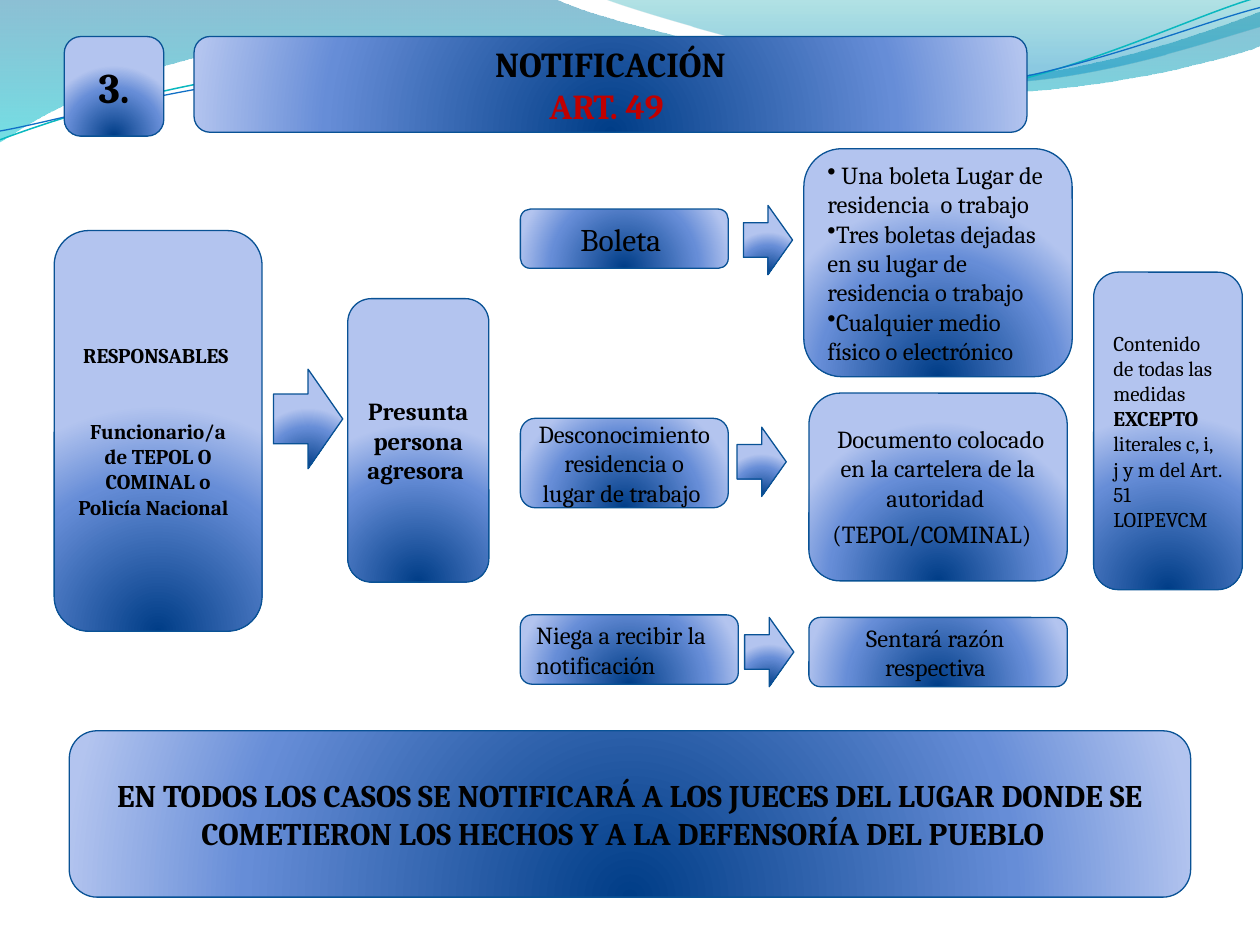
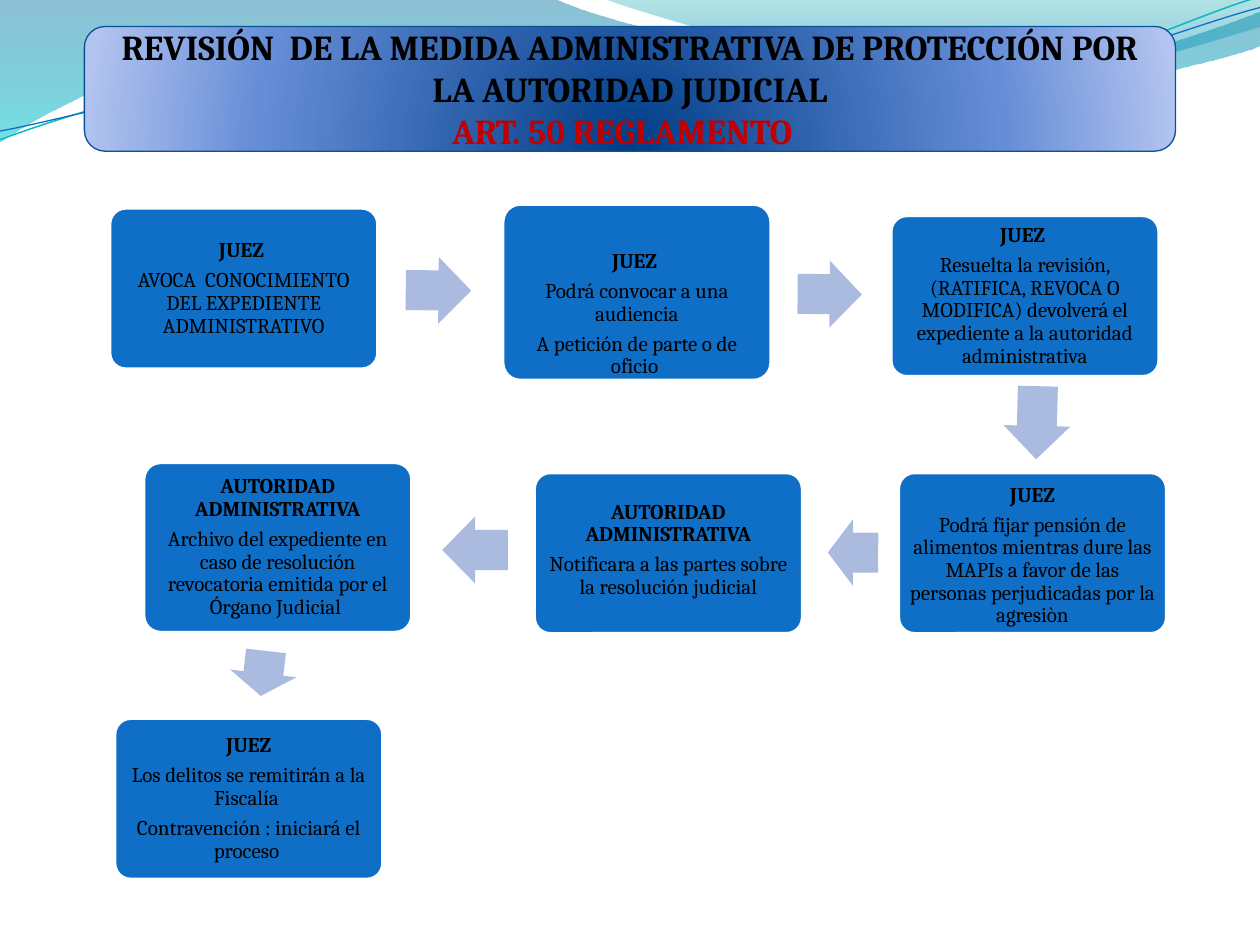
from dataclasses import dataclass

from lxml import etree
from pptx import Presentation
from pptx import util as u
from pptx.dml.color import RGBColor
from pptx.enum import shapes, text
from pptx.oxml import ns, parse_xml

FONT = "Cambria"
BLACK, RED, WHITE = "000000", "C00000", "FFFFFF"
EDGE, STEP_BLUE, ARROW_BLUE = "095295", "0F6FC6", "ABBBDF"
GLOW = [(0, "003D87", 100), (68, "668DD7", 100), (100, "B3C4EF", 100)]
CENTER, LEFT = text.PP_ALIGN.CENTER, text.PP_ALIGN.LEFT
ROUNDED = shapes.MSO_SHAPE.ROUNDED_RECTANGLE
ARROW = shapes.MSO_SHAPE.RIGHT_ARROW


@dataclass
class Span:
    words: str
    size: float = 14
    bold: bool = False
    color: str = BLACK


@dataclass
class Place:
    left: float
    top: float
    width: float
    height: float

    def lengths(self) -> list:
        return [u.Inches(v) for v in (self.left, self.top, self.width, self.height)]


@dataclass
class Card:
    """Glossy rounded box; each paragraph is a list of spans."""
    place: Place
    paragraphs: list
    align: int = CENTER
    bullet: bool = False
    gap: float = 0


@dataclass
class Step:
    """Flat process box: a bold actor above what that actor does."""
    place: Place
    actor: str
    actions: list
    drop: float = 0


@dataclass
class Turn:
    place: Place
    angle: float


@dataclass
class Wave:
    """Outline pieces: 2 numbers for a straight line, 6 for a Bézier curve."""
    start: tuple
    pieces: list
    stops: list = None
    line: str = None
    weight: float = 0


# ---- Formatting helpers
def rgb(code: str) -> RGBColor:
    return RGBColor.from_string(code)


def gradient(shape, stops: list, direction: str) -> None:
    """Fill with (position, colour, opacity) stops."""
    marks = "".join(f'<a:gs pos="{pos * 1000}"><a:srgbClr val="{code}">'
                    f'<a:alpha val="{opacity * 1000}"/></a:srgbClr></a:gs>'
                    for pos, code, opacity in stops)
    shape.fill.background()
    blank = shape.element.spPr.find(ns.qn("a:noFill"))
    blank.getparent().replace(blank, parse_xml(
        f'<a:gradFill {ns.nsdecls("a")} rotWithShape="1"><a:gsLst>{marks}</a:gsLst>'
        f'{direction}</a:gradFill>'))


def glossy(shape) -> None:
    gradient(shape, GLOW, '<a:path path="circle"><a:fillToRect l="50000" t="130000" '
                          'r="50000" b="-30000"/></a:path>')
    shape.line.color.rgb = rgb(EDGE)
    shape.line.width = u.Pt(0.75)
    shape.shadow.inherit = False


def write(frame, paragraphs: list, align: int = CENTER) -> None:
    frame.word_wrap = True
    frame.auto_size = text.MSO_AUTO_SIZE.NONE
    frame.vertical_anchor = text.MSO_ANCHOR.MIDDLE
    for number, spans in enumerate(paragraphs):
        para = frame.add_paragraph() if number else frame.paragraphs[0]
        para.alignment = align
        for span in spans:
            run = para.add_run()
            run.text = span.words
            font = run.font
            font.name, font.size, font.bold = FONT, u.Pt(span.size), span.bold
            font.color.rgb = rgb(span.color)


# ---- Drawing functions
def draw_card(page, card: Card) -> None:
    box = page.shapes.add_shape(ROUNDED, *card.place.lengths())
    glossy(box)
    write(box.text_frame, card.paragraphs, card.align)
    for para in box.text_frame.paragraphs[1:]:
        para.space_before = u.Pt(card.gap)
    if card.bullet:
        for para in box.text_frame.paragraphs:
            properties = para._p.get_or_add_pPr()
            properties.set("marL", "0")
            properties.set("indent", "0")
            etree.SubElement(properties, ns.qn("a:buChar"), char="•")


def draw_glossy_arrow(page, place: Place) -> None:
    glossy(page.shapes.add_shape(ARROW, *place.lengths()))


def draw_step(page, step: Step) -> None:
    box = page.shapes.add_shape(ROUNDED, *step.place.lengths())
    box.adjustments[0] = 0.1
    box.shadow.inherit = False
    box.fill.solid()
    box.fill.fore_color.rgb = rgb(STEP_BLUE)
    box.line.color.rgb = rgb(WHITE)
    box.line.width = u.Pt(2)
    frame = box.text_frame
    frame.margin_left = frame.margin_right = frame.margin_bottom = u.Inches(0.05)
    frame.margin_top = u.Inches(0.05 + step.drop)
    write(frame, [[Span(step.actor, 12, True)]] + [[Span(a, 12)] for a in step.actions])
    for para in frame.paragraphs:
        para.line_spacing = 0.9
        para.space_after = u.Pt(4.2)


def draw_turn(page, turn: Turn) -> None:
    arrow = page.shapes.add_shape(ARROW, *turn.place.lengths())
    arrow.adjustments[0], arrow.adjustments[1] = 0.6, 0.5
    arrow.rotation = turn.angle
    arrow.shadow.inherit = False
    arrow.fill.solid()
    arrow.fill.fore_color.rgb = rgb(ARROW_BLUE)
    arrow.line.fill.background()


def draw_title(page, place: Place, heading: str, article: str) -> None:
    band = page.shapes.add_shape(ROUNDED, *place.lengths())
    glossy(band)
    title = page.shapes.title
    title.left, title.top, title.width, title.height = place.lengths()
    write(title.text_frame, [[Span(heading, 20, True)], [Span(article, 20, True, RED)]])
    band.element.addnext(title.element)


def draw_wave(page, wave: Wave):
    def emu(numbers: tuple) -> list:
        return [(u.Inches(x), u.Inches(y)) for x, y in zip(numbers[::2], numbers[1::2])]

    pieces = [emu(piece) for piece in wave.pieces]
    builder = page.shapes.build_freeform(*emu(wave.start)[0])
    builder.add_line_segments([piece[-1] for piece in pieces], close=bool(wave.stops))
    shape = builder.convert_to_shape()

    # Bend the straight segments that have control points
    segments = list(shape.element.iter(ns.qn("a:lnTo")))
    for segment, piece in zip(segments, pieces):
        if len(piece) == 3:
            curve = etree.Element(ns.qn("a:cubicBezTo"))
            for x, y in piece:
                etree.SubElement(curve, ns.qn("a:pt"),
                                 x=str(x - shape.left), y=str(y - shape.top))
            segment.getparent().replace(segment, curve)

    shape.shadow.inherit = False
    if wave.stops:
        gradient(shape, wave.stops, '<a:lin ang="5400000" scaled="0"/>')
        shape.line.fill.background()
    else:
        shape.fill.background()
        shape.line.color.rgb = rgb(wave.line)
        shape.line.width = u.Pt(wave.weight)
    return shape


# ---- Shared header waves
WAVES = [
    Wave((0, 0), [(4.4, -0.01), (4.76, 0.17, 6.64, 0.63, 7.58, 0.63),
                  (8.53, 0.63, 9.58, 0.26, 10, 0.09), (10.01, 0.36),
                  (9.83, 0.44, 8.7, 0.76, 7.46, 0.75),
                  (6.22, 0.75, 3.82, 0.28, 2.57, 0.34),
                  (1.29, 0.36, 0.46, 0.83, -0.01, 1.13)],
         stops=[(0, "0074A1", 45), (100, "00C6CF", 55)]),
    Wave((4.79, -0.01), [(5.09, 0.11, 6.82, 0.62, 7.69, 0.65),
                         (8.56, 0.69, 9.61, 0.32, 10, 0.21), (10, 0)],
         stops=[(0, "00A1A9", 30), (80, "008BBF", 45)]),
    Wave((0, 1.11), [(0.48, 0.93, 1.58, 0.57, 2.77, 0.52),
                     (3.95, 0.47, 5.93, 0.89, 7.13, 0.8),
                     (8.33, 0.71, 9.38, 0.15, 9.98, -0.02)], line="0AB8BF", weight=0.85),
    Wave((0, 1.04), [(0.47, 0.96, 1.64, 0.61, 2.83, 0.56),
                     (4.03, 0.51, 5.97, 0.84, 7.17, 0.75),
                     (8.36, 0.67, 9.41, 0.21, 10, 0.06)], line="0F6FC6", weight=0.75),
]

# ---- Slide 1: notification
NOTICE_CARDS = [
    Card(Place(0.51, 0.29, 0.79, 0.79), [[Span("3.", 24, True)]]),
    Card(Place(0.43, 1.83, 1.65, 3.18),
         [[Span("RESPONSABLES ", 12, True)],
          [Span("Funcionario/a de TEPOL O COMINAL o Policía Nacional  ", 12, True)]], gap=29),
    Card(Place(2.76, 2.37, 1.12, 2.25), [[Span("Presunta persona agresora ", bold=True)]]),
    Card(Place(8.68, 2.16, 1.18, 2.52),
         [[Span("Contenido de todas las medidas  ", 12), Span("EXCEPTO ", 12, True),
           Span("literales c, i, j y m del Art. 51 LOIPEVCM", 12)]], LEFT),
    Card(Place(4.13, 1.66, 1.65, 0.47), [[Span("Boleta ", 18)]]),
    Card(Place(4.13, 3.32, 1.65, 0.71),
         [[Span("Desconocimiento residencia o lugar de trabajo ")]]),
    Card(Place(4.13, 4.88, 1.73, 0.55), [[Span("Niega a recibir la notificación")]], LEFT),
    Card(Place(6.38, 1.18, 2.13, 1.81),
         [[Span(" Una boleta Lugar de residencia  o trabajo")],
          [Span("Tres boletas dejadas en su lugar de residencia o trabajo")],
          [Span("Cualquier medio físico o electrónico")]], LEFT, bullet=True),
    Card(Place(6.42, 3.12, 2.05, 1.49),
         [[Span(" Documento colocado en la cartelera de la autoridad  (TEPOL/COMINAL) "),
           Span(" ", 18)]]),
    Card(Place(6.42, 4.9, 2.05, 0.55), [[Span("Sentará razón  respectiva ")]]),
    Card(Place(0.55, 5.8, 8.9, 1.32),
         [[Span("EN TODOS LOS CASOS SE NOTIFICARÁ A LOS JUECES DEL LUGAR DONDE SE "
                "COMETIERON LOS HECHOS Y A LA DEFENSORÍA DEL PUEBLO  ", 18, True)]]),
]
NOTICE_ARROWS = [Place(2.17, 2.93, 0.55, 0.79)] + [
    Place(left, top, 0.39, 0.55) for left, top in ((5.9, 1.63), (5.85, 3.39), (5.91, 4.9))]

# ---- Slide 2: judicial review
STEP_W, STEP_H, TURN_H = 2.13, 1.28, 0.53
JUDGE, AUTHORITY = "JUEZ ", "AUTORIDAD ADMINISTRATIVA"
REVIEW_STEPS = [
    Step(Place(0.87, 1.65, STEP_W, STEP_H), JUDGE,
         ["AVOCA  CONOCIMIENTO DEL EXPEDIENTE ADMINISTRATIVO"]),
    Step(Place(3.99, 1.62, STEP_W, 1.4), JUDGE,
         ["Podrá convocar a una audiencia", "A petición de parte o de oficio "], drop=0.35),
    Step(Place(7.07, 1.71, STEP_W, STEP_H), JUDGE,
         ["Resuelta la revisión, (RATIFICA, REVOCA O MODIFICA) devolverá el expediente "
          "a la autoridad administrativa"]),
    Step(Place(7.13, 3.75, STEP_W, STEP_H), JUDGE.strip(),
         ["Podrá fijar pensión de alimentos mientras dure las MAPIs a favor de las "
          "personas perjudicadas por la agresiòn"], drop=0.04),
    Step(Place(4.24, 3.75, STEP_W, STEP_H), AUTHORITY,
         ["Notificara a las partes sobre la resolución judicial"], drop=-0.05),
    Step(Place(1.14, 3.67, STEP_W, 1.35), AUTHORITY,
         ["Archivo del expediente en caso de resolución revocatoria emitida por el "
          "Órgano Judicial "]),
    Step(Place(0.91, 5.7, STEP_W, STEP_H), JUDGE.strip(),
         ["Los delitos se remitirán a la Fiscalía ", "Contravención : iniciará el proceso "]),
]
REVIEW_TURNS = [Turn(Place(left, top, width, TURN_H), angle) for left, top, width, angle in (
    (3.22, 2.04, 0.52, 0.5), (6.33, 2.07, 0.51, 0.5), (7.94, 3.09, 0.58, 91.4),
    (6.57, 4.12, 0.4, 180.1), (3.51, 4.1, 0.52, 180), (1.91, 5.08, 0.36, 96.6))]


def main() -> None:
    deck = Presentation()
    deck.slide_width, deck.slide_height = u.Inches(10), u.Inches(7.5)
    layout = deck.slide_layouts.get_by_name("Title Only")
    notice, review = (deck.slides.add_slide(layout) for _ in range(2))

    # Waves live on the layout, behind everything
    for position, wave in enumerate(WAVES, start=2):
        layout.shapes.element.insert(position, draw_wave(notice, wave).element)

    draw_title(notice, Place(1.54, 0.29, 6.61, 0.76), "NOTIFICACIÓN", "ART. 49 ")
    for card in NOTICE_CARDS:
        draw_card(notice, card)
    for place in NOTICE_ARROWS:
        draw_glossy_arrow(notice, place)

    draw_title(review, Place(0.67, 0.21, 8.66, 0.99),
               "REVISIÓN  DE LA MEDIDA ADMINISTRATIVA DE PROTECCIÓN POR LA AUTORIDAD JUDICIAL",
               "ART. 50 REGLAMENTO  ")
    for step in REVIEW_STEPS:
        draw_step(review, step)
    for turn in REVIEW_TURNS:
        draw_turn(review, turn)

    deck.save("out.pptx")


if __name__ == "__main__":
    main()
